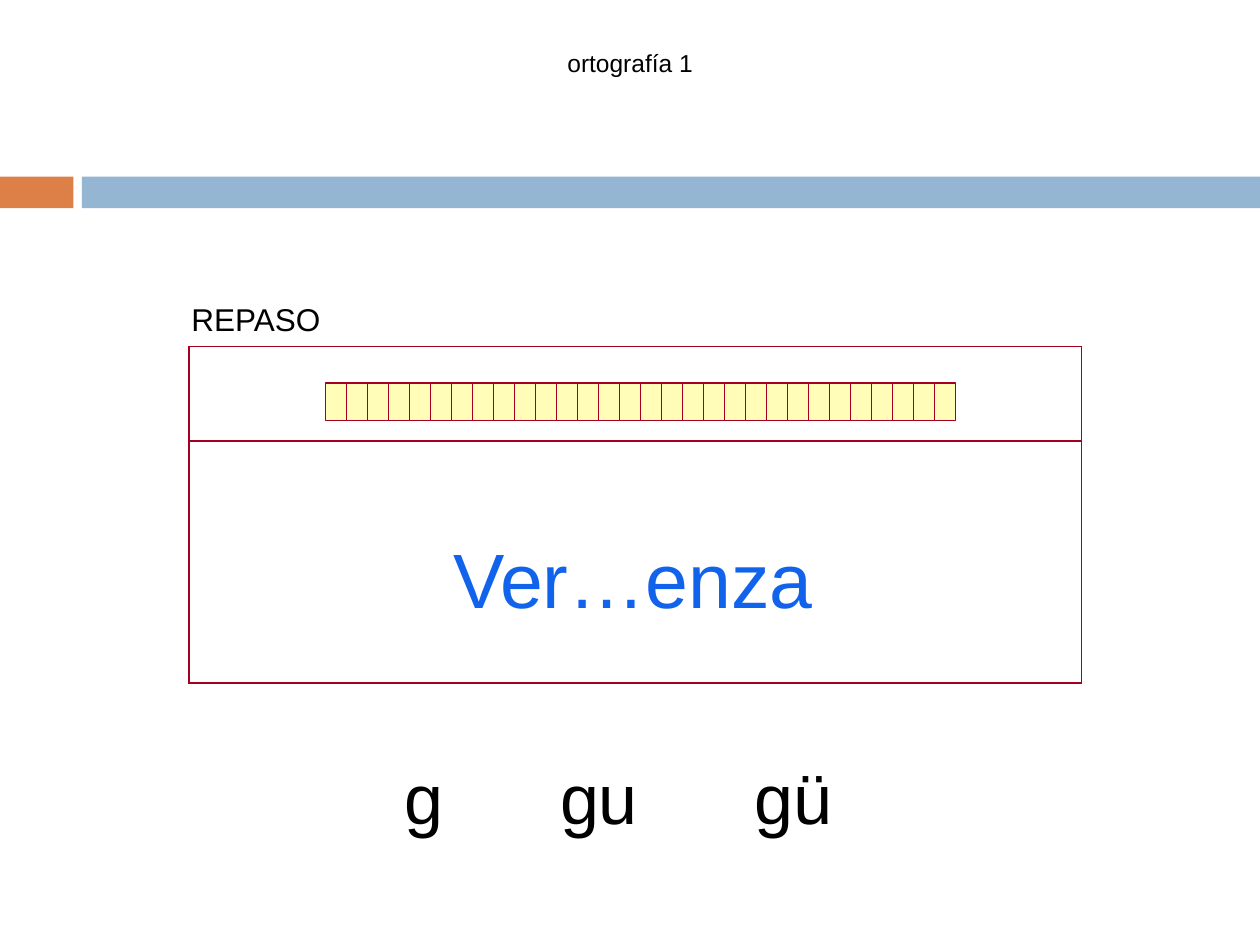
"""Build a Spanish spelling review slide with a fill-in word and three options."""
from lxml import etree
from pptx import Presentation
from pptx.dml.color import RGBColor
from pptx.enum.shapes import MSO_SHAPE
from pptx.enum.text import MSO_ANCHOR, PP_ALIGN
from pptx.oxml.ns import qn
from pptx.util import Cm, Pt

RECT = MSO_SHAPE.RECTANGLE
TOP = MSO_ANCHOR.TOP
LEFT, CENTER = PP_ALIGN.LEFT, PP_ALIGN.CENTER
COLORS = {"orange": "DD8047", "blue": "94B6D2", "cream": "FFFDB7",
          "wine": "A50021", "word": "1063EA", "black": "000000"}


def add_rect(x, y, w, h, fill, line=None):
    sp = s.shapes.add_shape(RECT, Cm(x), Cm(y), Cm(w), Cm(h))
    sp.shadow.inherit = False
    sp.fill.solid()
    sp.fill.fore_color.rgb = RGBColor.from_string(COLORS[fill])
    if line:
        sp.line.color.rgb = RGBColor.from_string(COLORS[line])
        sp.line.width = Pt(0.75)
    else:
        sp.line.fill.background()


def set_text(sp, text, size, color="black", align=CENTER):
    tf = sp.text_frame
    tf.word_wrap = True
    tf.vertical_anchor = TOP
    p = tf.paragraphs[0]
    p.text = text
    p.alignment = align
    p.space_before = Pt(size / 10)
    p.font.name = "Arial"
    p.font.size = Pt(size)
    p.font.color.rgb = RGBColor.from_string(COLORS[color])
    return p


prs = Presentation()
prs.slide_width, prs.slide_height = Cm(25.4), Cm(19.05)
s = prs.slides.add_slide(prs.slide_layouts[5])

add_rect(0, 3.56, 1.48, 0.64, "orange")
add_rect(1.65, 3.56, 23.75, 0.64, "blue")

count = 30
step = 12.7 / count
for i in range(count):
    add_rect(6.56 + i * step, 7.72, step, 0.76, "cream", "wine")

table = s.shapes.add_table(2, 1, Cm(3.81), Cm(6.99), Cm(17.99), Cm(6.78)).table
table.first_row = table.horz_banding = False
for row, height in zip(table.rows, (1.9, 4.88)):
    row.height = Cm(height)
    cell = row.cells[0]
    tcPr = cell._tc.get_or_add_tcPr()
    for side in ("a:lnL", "a:lnR", "a:lnT", "a:lnB"):
        ln = etree.SubElement(tcPr, qn(side), w=str(Pt(1)))
        fill = etree.SubElement(ln, qn("a:solidFill"))
        etree.SubElement(fill, qn("a:srgbClr"), val=COLORS["wine"])
    cell.fill.background()

title = s.shapes.title
title.left, title.top, title.width, title.height = Cm(9.53), Cm(0.84), Cm(6.35), Cm(0.84)
set_text(title, "ortografía 1", 14)

heading = s.shapes.add_textbox(Cm(3.61), Cm(5.92), Cm(4.88), Cm(1.02))
set_text(heading, "REPASO", 18, align=LEFT)

word = s.shapes.add_textbox(Cm(6.83), Cm(10.59), Cm(11.86), Cm(2.11))
set_text(word, "Ver…enza", 44, "word")

options = s.shapes.add_textbox(Cm(2.72), Cm(15.42), Cm(19.48), Cm(1.68))
p = set_text(options, "g\tgu\tgü", 40, align=LEFT)
p.line_spacing = 0.8
options.text_frame.margin_left = Cm(5.43)
tabs = etree.Element(qn("a:tabLst"))
for pos in (3.14, 7.06):
    etree.SubElement(tabs, qn("a:tab"), pos=str(Cm(pos)), algn="l")
p._p.get_or_add_pPr().find(qn("a:defRPr")).addprevious(tabs)

prs.save("out.pptx")
